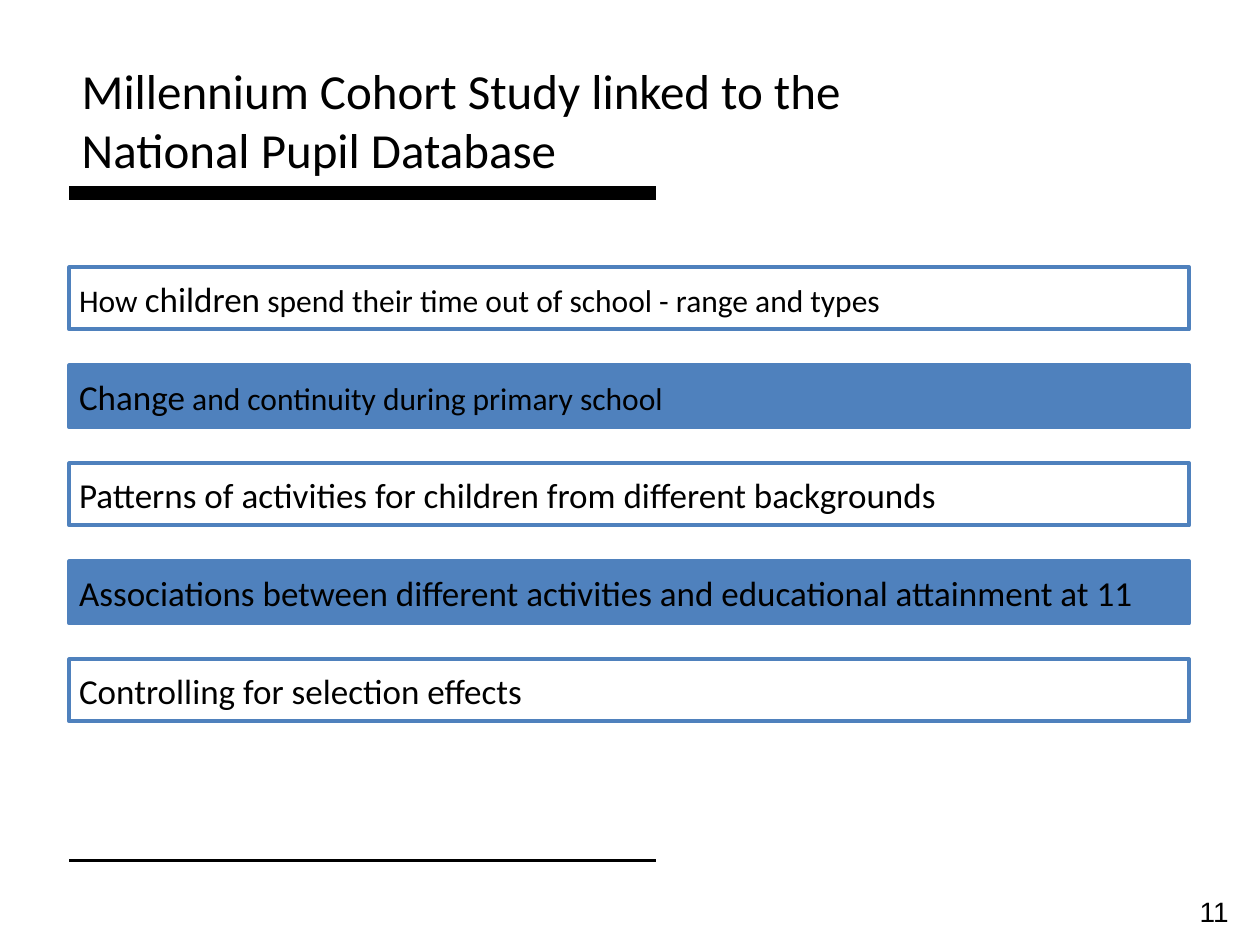
from pptx import Presentation
from pptx.dml.color import RGBColor
from pptx.enum.shapes import MSO_CONNECTOR, MSO_SHAPE
from pptx.enum.text import MSO_ANCHOR, PP_ALIGN
from pptx.oxml.ns import qn
from pptx.util import Pt
from lxml.etree import SubElement


def color(code):
    return RGBColor.from_string(code)


def write(frame, lines, face="Calibri", align=PP_ALIGN.LEFT, pad=None):
    form = {"word_wrap": True, "vertical_anchor": MSO_ANCHOR.MIDDLE}
    if pad is not None:
        for side in ("left", "right", "top", "bottom"):
            form["margin_" + side] = Pt(pad)
    for key, val in form.items():
        setattr(frame, key, val)
    para = frame.paragraphs[0]
    para.alignment = align
    for row, parts in enumerate(lines):
        if row:
            para.add_line_break()
        for text, size in parts:
            run = para.add_run()
            run.text = text
            for key, val in {"name": face, "size": Pt(size)}.items():
                setattr(run.font, key, val)
            run.font.color.rgb = color("000000")


deck = Presentation()
deck.slide_width, deck.slide_height = Pt(720), Pt(540)
slide = deck.slides.add_slide(deck.slide_layouts[6])
shapes = slide.shapes
left = 39.6

for top, width in ((110.2, 8), (491.8, 2)):
    rule = shapes.add_connector(
        MSO_CONNECTOR.STRAIGHT, Pt(left), Pt(top), Pt(375), Pt(top))
    rule.line.color.rgb = color("000000")
    rule.line.width = Pt(width)
    SubElement(rule._element.spPr, qn("a:effectLst"))

page = shapes.add_textbox(Pt(541.4), Pt(506.2), Pt(167.8), Pt(28.8))
write(page.text_frame, [[("11", 16)]], "Arial", PP_ALIGN.RIGHT)

title = shapes.add_textbox(Pt(left), Pt(36), Pt(624), Pt(64.8))
write(title.text_frame, [
    [("Millennium Cohort Study linked to the ", 28)],
    [("National Pupil Database", 28)],
])

topics = [
    [("How ", 18), ("children", 20),
     (" spend their time out of school - range and types", 18)],
    [("Change", 20), (" and continuity during primary school", 18)],
    [("Patterns of activities for children from different backgrounds", 20)],
    [("Associations between different activities and educational attainment at 11", 20)],
    [("Controlling for selection effects", 20)],
]
for row, parts in enumerate(topics):
    bar = shapes.add_shape(
        MSO_SHAPE.RECTANGLE, Pt(left), Pt(152.8 + 56 * row), Pt(640), Pt(35.5))
    bar.shadow.inherit = False
    bar.fill.solid()
    bar.fill.fore_color.rgb = color("4F81BD" if row % 2 else "FFFFFF")
    bar.line.color.rgb = color("4F81BD")
    bar.line.width = Pt(2.25)
    write(bar.text_frame, [parts], pad=5.6)

deck.save("out.pptx")
